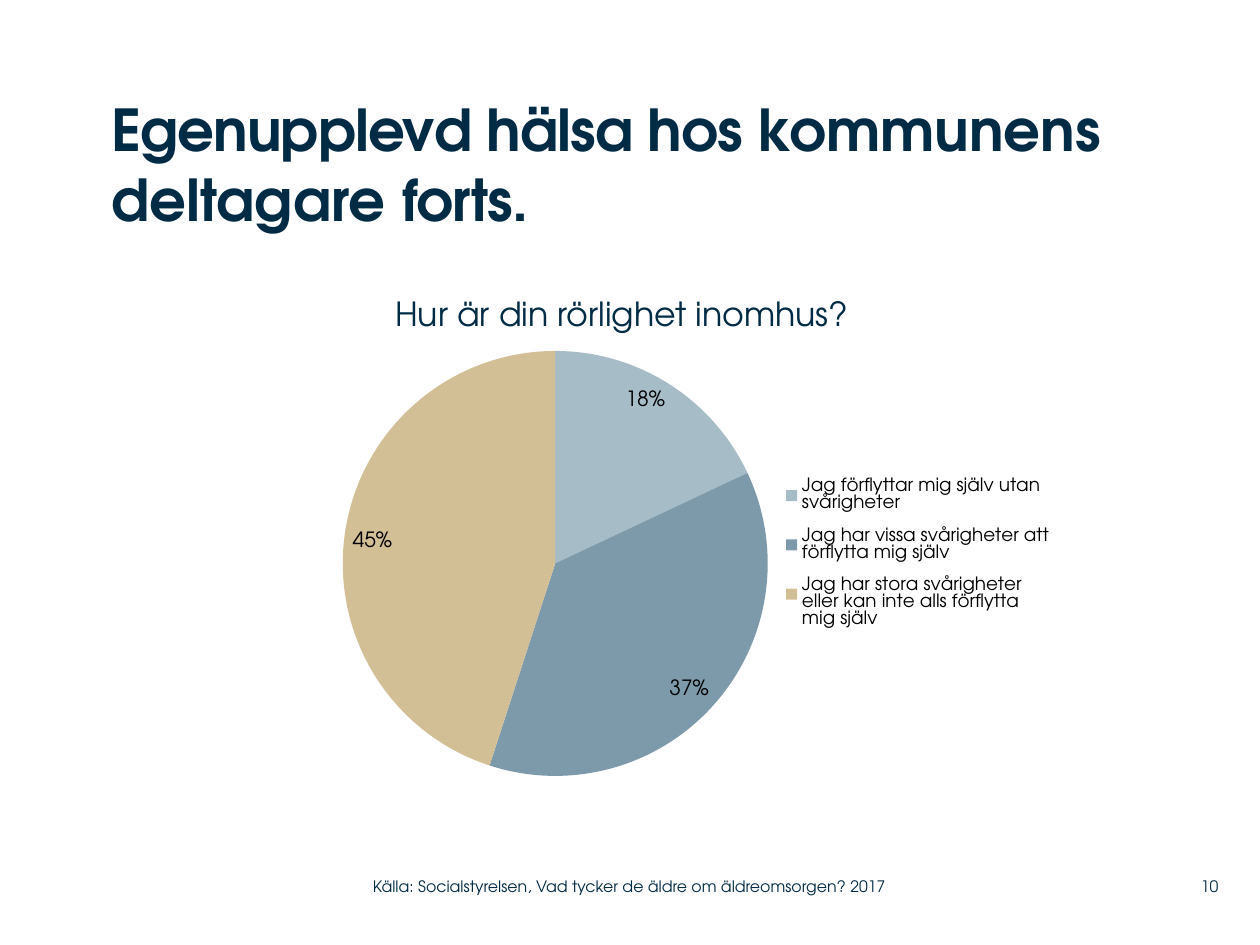
from lxml import etree
from pptx import Presentation
from pptx import util as u
from pptx.chart.data import CategoryChartData
from pptx.dml.color import RGBColor
from pptx.enum import chart as charts, text
from pptx.oxml.ns import qn

FONT = "TeX Gyre Adventor"
COLORS = {"navy": "002B45", "black": "000000",
          "mist": "A6BCC6", "steel": "7D9AAA", "sand": "D3BF96"}
ANSWERS = [
    ("Jag förflyttar mig själv utan svårigheter", 18, "mist"),
    ("Jag har vissa svårigheter att förflytta mig själv", 37, "steel"),
    ("Jag har stora svårigheter eller kan inte alls förflytta mig själv", 45, "sand"),
]


def rgb(name):
    return RGBColor.from_string(COLORS[name])


def set_values(target, **values):
    for name, value in values.items():
        setattr(target, name, value)


def style_font(font, size, color="navy", bold=False):
    set_values(font, name=FONT, size=u.Pt(size), bold=bold)
    font.color.rgb = rgb(color)


def remove_margins(frame):
    set_values(frame, margin_left=0, margin_top=0, margin_right=0, margin_bottom=0)


def place_title(slide, spans):
    title = slide.shapes.title
    set_values(title, left=u.Cm(2.24), top=u.Cm(1.9),
               width=u.Cm(20.37), height=u.Cm(3.61))
    frame = title.text_frame
    remove_margins(frame)
    set_values(frame, word_wrap=True, vertical_anchor=text.MSO_ANCHOR.TOP,
               auto_size=text.MSO_AUTO_SIZE.NONE)
    para = frame.paragraphs[0]
    para.alignment = text.PP_ALIGN.LEFT
    for words, spacing in spans:
        span = para.add_run()
        span.text = words
        style_font(span.font, 33, bold=True)
        span._r.get_or_add_rPr().set("spc", str(spacing))


def add_text(slide, words, place, size, align=text.PP_ALIGN.LEFT, footer=False):
    box = slide.shapes.add_textbox(*map(u.Cm, place))
    frame = box.text_frame
    frame.word_wrap = True
    if footer:
        remove_margins(frame)
        frame.vertical_anchor = text.MSO_ANCHOR.MIDDLE
    else:
        frame.auto_size = text.MSO_AUTO_SIZE.SHAPE_TO_FIT_TEXT
    para = frame.paragraphs[0]
    para.alignment = align
    span = para.add_run()
    span.text = words
    style_font(span.font, size)


def make_layout(parent, x, y, w, h, inner=False):
    """Replace the automatic layout of a chart part by fixed fractions."""
    for old in parent.findall(qn("c:layout")):
        parent.remove(old)
    layout = etree.Element(qn("c:layout"))
    manual = etree.SubElement(layout, qn("c:manualLayout"))
    values = {"layoutTarget": "inner"} if inner else {}
    values.update(xMode="edge", yMode="edge", x=x, y=y, w=w, h=h)
    for name, value in values.items():
        etree.SubElement(manual, qn(f"c:{name}")).set("val", str(value))
    return layout


def add_pie(slide):
    data = CategoryChartData()
    data.categories = [answer for answer, _, _ in ANSWERS]
    data.add_series("Series 1", [share for _, share, _ in ANSWERS])
    place = map(u.Cm, (6.55, 6.32, 14.86, 10.08))
    chart = slide.shapes.add_chart(charts.XL_CHART_TYPE.PIE, *place, data).chart
    set_values(chart, has_title=False, has_legend=True)
    style_font(chart.font, 10, "black")

    # Slices and percentages
    plot = chart.plots[0]
    set_values(plot, vary_by_categories=True, has_data_labels=True)
    for index, (_, _, color) in enumerate(ANSWERS):
        fill = plot.series[0].points[index].format.fill
        fill.solid()
        fill.fore_color.rgb = rgb(color)
    labels = plot.data_labels
    set_values(labels, show_percentage=True, show_value=False,
               number_format="0%", number_format_is_linked=False,
               position=charts.XL_LABEL_POSITION.INSIDE_END)
    style_font(labels.font, 12, "black")

    # Legend
    legend = chart.legend
    set_values(legend, position=charts.XL_LEGEND_POSITION.RIGHT,
               include_in_layout=False)
    style_font(legend.font, 10.5, "black")

    # Fixed places of pie and legend
    area = chart._chartSpace.chart.plotArea
    area.insert(0, make_layout(area, 0.024, 0.075, 0.577, 0.85, inner=True))
    legend_part = legend._element
    legend_layout = make_layout(legend_part, 0.63, 0.3, 0.36, 0.36)
    legend_part.find(qn("c:legendPos")).addnext(legend_layout)


def main():
    deck = Presentation()
    set_values(deck, slide_width=u.Cm(25.4), slide_height=u.Cm(19.05))
    slide = deck.slides.add_slide(deck.slide_layouts[5])

    # Heading and question
    place_title(slide, [("Egenupplevd hälsa hos ", -50),
                        ("kommunens deltagare ", 0), ("forts.", -50)])
    add_text(slide, "Hur är din rörlighet inomhus?", (7.72, 5.79, 10.34, 1.07), 19)

    add_pie(slide)

    # Footer
    add_text(slide, "10", (23.37, 17.5, 1.19, 0.74), 9,
             text.PP_ALIGN.RIGHT, footer=True)
    add_text(slide, "Källa: Socialstyrelsen, Vad tycker de äldre om äldreomsorgen? 2017",
             (7.52, 17.5, 11.25, 0.74), 9, footer=True)
    deck.save("out.pptx")


if __name__ == "__main__":
    main()
